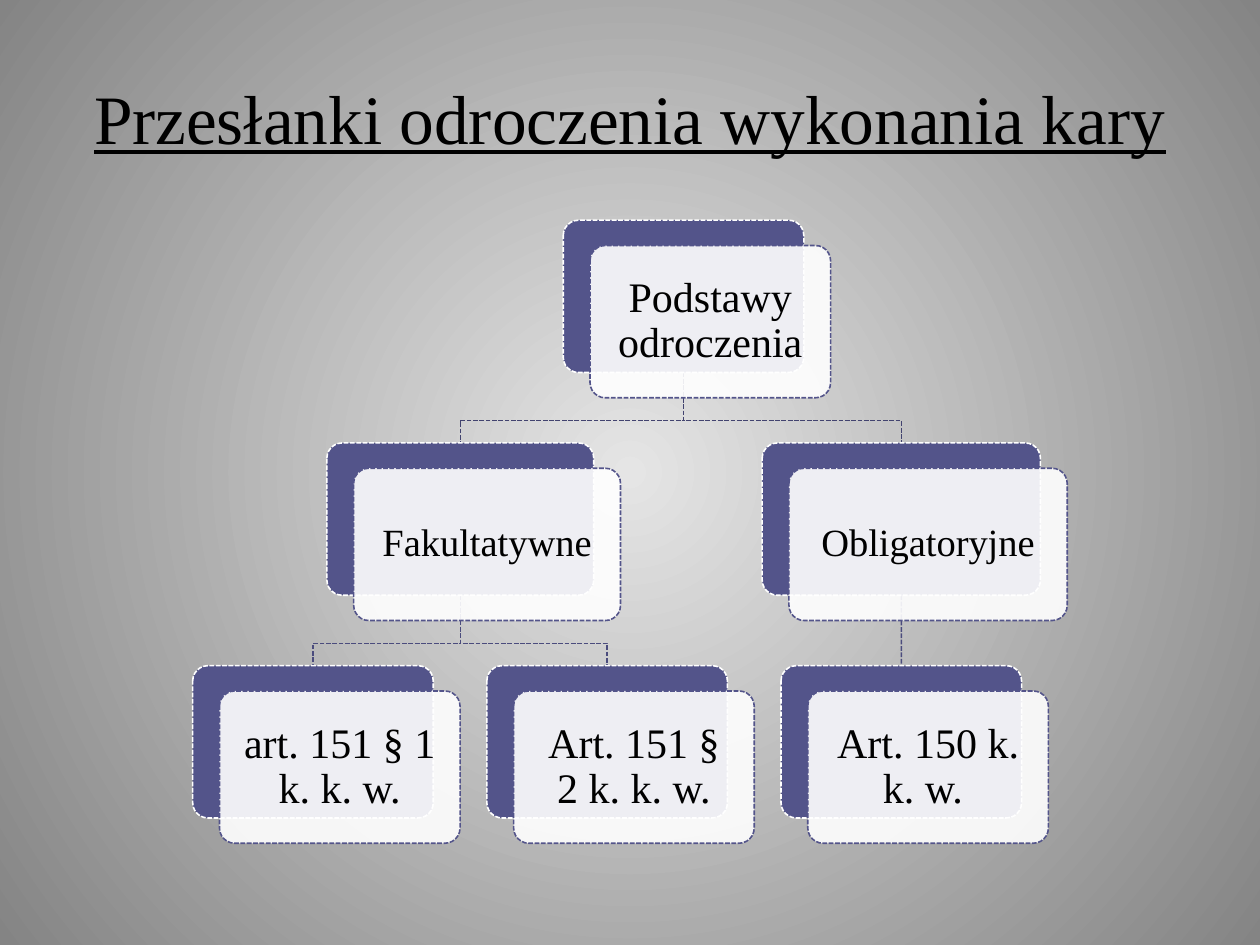
from pptx import Presentation
from pptx.dml.color import RGBColor
from pptx.enum.dml import MSO_LINE as Dash
from pptx.enum.shapes import MSO_CONNECTOR as Link, MSO_SHAPE as Form
from pptx.enum.text import MSO_ANCHOR as Anchor, PP_ALIGN as Align
from pptx.oxml import parse_xml
from pptx.oxml.ns import nsdecls, qn
from pptx.util import Cm, Pt


def color(code):
    return RGBColor.from_string(code)


def write(shape, text, size=24, pad=0.25, gap=None, line=False):
    frame = shape.text_frame
    frame.word_wrap = True
    frame.vertical_anchor = Anchor.MIDDLE
    frame.margin_left = frame.margin_right = Cm(pad)
    frame.margin_top = frame.margin_bottom = Cm(pad)
    para = frame.paragraphs[0]
    para.alignment = Align.CENTER
    para.line_spacing = gap
    run = para.add_run()
    run.text = text
    font = run.font
    font.name, font.size, font.underline = "Times New Roman", Pt(size), line
    font.color.rgb = color("000000")


class Chart:
    """Draws a tree of layered cards on one slide."""

    base, white = "53548A", "FFFFFF"
    top, pitch, high = 4.44, 4.49, 3.07
    right, down, drop = 0.54, 0.51, 0.97

    def __init__(self, slide):
        self.slide, self.shapes = slide, slide.shapes

    def back(self, inner, outer):
        fill = self.slide.background.fill
        fill.gradient()
        for stop, code in zip(fill.gradient_stops, (inner, outer)):
            stop.color.rgb = color(code)
        lin = self.slide.element.find(".//" + qn("a:lin"))
        lin.getparent().replace(lin, parse_xml(
            f'<a:path {nsdecls("a")} path="circle">'
            '<a:fillToRect l="50000" t="50000" r="50000" b="50000"/></a:path>'))

    def title(self, text):
        box = self.shapes.add_textbox(Cm(1.27), Cm(0.76), Cm(22.86), Cm(3.18))
        write(box, text, size=39.6, line=True)

    def stroke(self, shape, code):
        shape.line.color.rgb = color(code)
        shape.line.width = Pt(0.9)
        shape.line.dash_style = Dash.SQUARE_DOT

    def panel(self, left, top, wide, fill, edge):
        shape = self.shapes.add_shape(
            Form.ROUNDED_RECTANGLE, Cm(left), Cm(top), Cm(wide), Cm(self.high))
        shape.adjustments[0] = 0.1
        shape.shadow.inherit = False
        shape.fill.solid()
        shape.fill.fore_color.rgb = color(fill)
        self.stroke(shape, edge)
        return shape

    def card(self, text, mid, row, wide=4.85, size=24):
        left, top = mid - wide / 2, self.top + row * self.pitch
        rear = self.panel(left, top, wide, self.base, self.white)
        front = self.panel(left + self.right, top + self.down, wide,
                           self.white, self.base)
        tint = front.fill._xPr.find(".//" + qn("a:srgbClr"))
        tint.append(parse_xml(f'<a:alpha {nsdecls("a")} val="90000"/>'))
        write(front, text, size=size, pad=0.34, gap=0.9)
        return rear

    def lower(self, shape, code):
        self.stroke(shape, code)
        self.shapes._spTree.insert(2, shape._element)

    def elbow(self, up, low, code):
        start, end = (card.left + card.width // 2 for card in (up, low))
        foot = up.top + up.height
        bend = foot + Cm(self.drop)
        pen = self.shapes.build_freeform(start, foot)
        pen.add_line_segments(
            [(start, bend), (end, bend), (end, low.top)], close=False)
        shape = pen.convert_to_shape()
        shape.fill.background()
        shape.shadow.inherit = False
        self.lower(shape, code)

    def line(self, up, low, code):
        link = self.shapes.add_connector(Link.STRAIGHT, 0, 0, 0, 0)
        link.begin_connect(up, 2)
        link.end_connect(low, 0)
        link._element.spPr.append(parse_xml(f'<a:effectLst {nsdecls("a")}/>'))
        self.lower(link, code)


def main():
    deck = Presentation()
    deck.slide_width, deck.slide_height = Cm(25.4), Cm(19.05)
    chart = Chart(deck.slides.add_slide(deck.slide_layouts[6]))
    chart.back("E5E5E5", "848484")
    chart.title("Przesłanki odroczenia wykonania kary")

    root = chart.card("Podstawy odroczenia", 13.78, 0)
    free = chart.card("Fakultatywne", 9.28, 1, wide=5.38, size=22)
    bound = chart.card("Obligatoryjne", 18.17, 1, wide=5.61, size=22)
    names = "art. 151 § 1 k. k. w.", "Art. 151 § 2 k. k. w.", "Art. 150 k. k. w. "
    first, second, third = [
        chart.card(name, 6.31 + 5.93 * col, 2) for col, name in enumerate(names)]

    for low in (free, bound):
        chart.elbow(root, low, "42436F")
    for low in (first, second):
        chart.elbow(free, low, "4B4C7D")
    chart.line(bound, third, "4B4C7D")
    deck.save("out.pptx")


if __name__ == "__main__":
    main()
